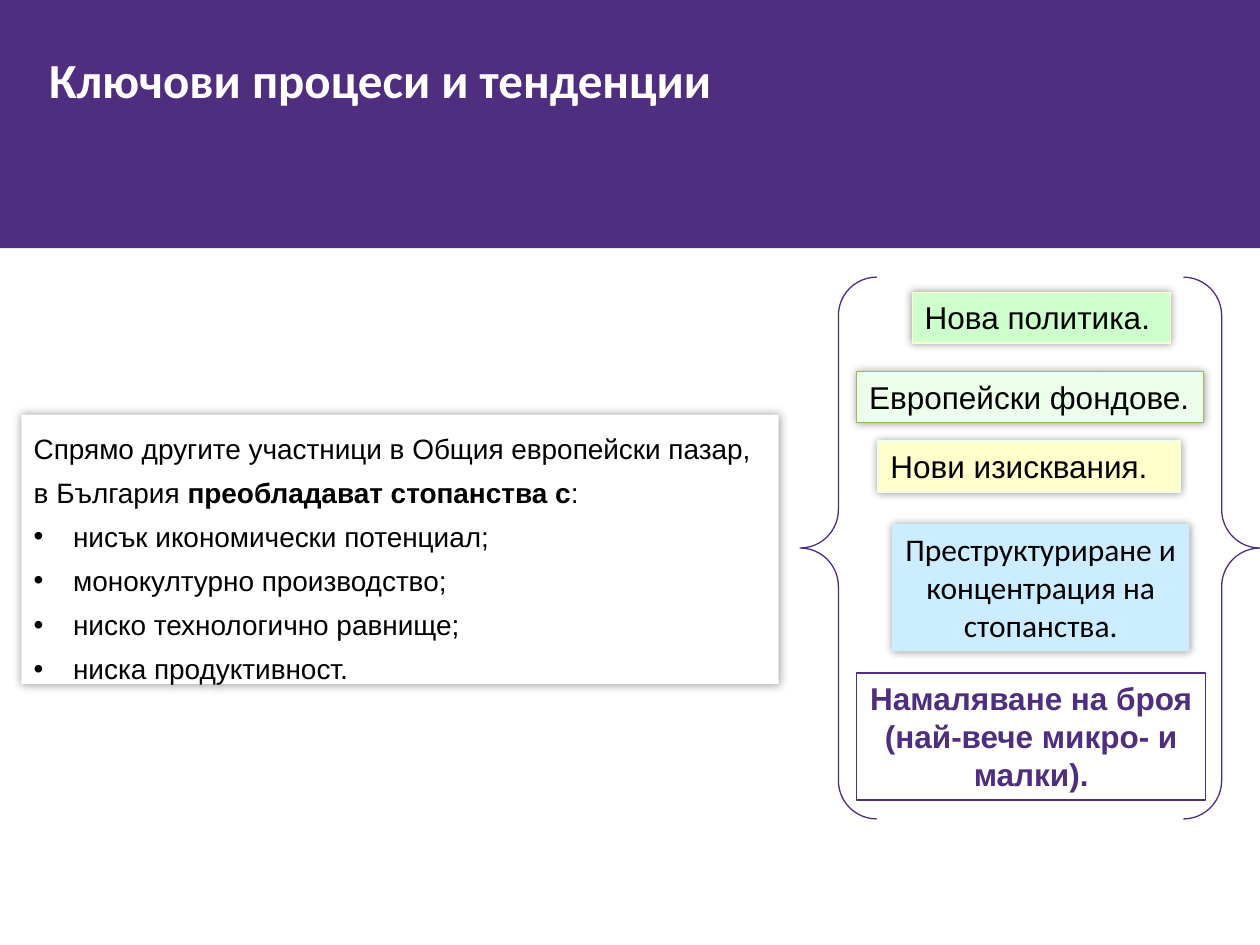
from lxml.etree import SubElement
from pptx import Presentation
from pptx.dml.color import RGBColor
from pptx.enum.shapes import MSO_SHAPE
from pptx.enum.text import MSO_ANCHOR, MSO_AUTO_SIZE, PP_ALIGN
from pptx.oxml.ns import qn
from pptx.util import Pt

COLORS = {
    "purple": "4F2D7F", "white": "FFFFFF", "black": "000000",
    "blue": "CCECFF", "yellow": "FFFFCC", "mint": "EBFFEB",
    "green": "CCFFCC", "olive": "9BBB59",
}
FACTORS = [
    ("Нова политика.", (521.3, 167, 147.6, 29.1), "green", "yellow", {}),
    ("Европейски фондове.", (489.6, 212.4, 198, 29.1), "mint", "olive", {}),
    ("Нови изисквания.", (501.8, 252, 172.8, 29.1), "yellow", "mint", {}),
    ("Преструктуриране и концентрация на стопанства.",
     (509.8, 299.5, 169.9, 72.7), "blue", None,
     {"font": "Calibri", "align": PP_ALIGN.CENTER}),
    ("Намаляване на броя (най-вече микро- и малки).",
     (489.6, 384.5, 199.4, 72.7), None, "purple",
     {"color": "purple", "bold": True, "align": PP_ALIGN.CENTER}),
]
INTRO = [
    [("Спрямо другите участници в Общия европейски пазар,", False)],
    [("в България ", False), ("преобладават стопанства с", True), (":", False)],
]
WEAKNESSES = [
    "нисък икономически потенциал;",
    "монокултурно производство;",
    "ниско технологично равнище;",
    "ниска продуктивност.",
]


def rgb(name):
    """Return the named palette colour."""
    return RGBColor.from_string(COLORS[name])


def add_text(p, text, size=18, font="Arial", color="black", bold=False,
             align=PP_ALIGN.LEFT):
    """Append a formatted run to a paragraph."""
    p.alignment = align
    r = p.add_run()
    r.text = text
    r.font.size, r.font.name, r.font.bold = Pt(size), font, bold
    r.font.color.rgb = rgb(color)


def add_shadow(sp):
    """Give a shape a soft even shadow."""
    effects = sp.element.spPr.find(qn("a:effectLst"))
    shadow = SubElement(effects, qn("a:outerShdw"), blurRad=str(Pt(5)),
                        dist="0", dir="0", algn="ctr", rotWithShape="0")
    color = SubElement(shadow, qn("a:srgbClr"), val=COLORS["black"])
    SubElement(color, qn("a:alpha"), val="40000")


def add_box(s, box, fill=None, line=None, kind=MSO_SHAPE.RECTANGLE):
    """Add a preset shape with optional fill and outline."""
    sp = s.shapes.add_shape(kind, *map(Pt, box))
    sp.shadow.inherit = False
    if fill:
        sp.fill.solid()
        sp.fill.fore_color.rgb = rgb(fill)
    else:
        sp.fill.background()
    if line:
        sp.line.color.rgb = rgb(line)
        sp.line.width = Pt(0.75)
    else:
        sp.line.fill.background()
    return sp


def prepare_frame(sp):
    """Set wrapping, top anchoring and growth, and return the text frame."""
    tf = sp.text_frame
    tf.word_wrap = True
    tf.vertical_anchor = MSO_ANCHOR.TOP
    tf.auto_size = MSO_AUTO_SIZE.SHAPE_TO_FIT_TEXT
    return tf


def add_bullet(p):
    """Give a paragraph a hanging round bullet."""
    pPr = p._p.get_or_add_pPr()
    pPr.set("marL", str(Pt(22.5)))
    pPr.set("indent", str(-Pt(22.5)))
    SubElement(pPr, qn("a:buFont"), typeface="Arial")
    SubElement(pPr, qn("a:buChar"), char="•")


def add_header(s):
    """Add the purple band and the title on it."""
    title = s.shapes.title
    band = add_box(s, (0, 0, 720, 141.8), "purple")
    title.element.addprevious(band.element)
    title.left, title.top, title.width, title.height = map(
        Pt, (28.1, 28.1, 663.1, 113))
    tf = title.text_frame
    tf.margin_left = tf.margin_top = tf.margin_right = tf.margin_bottom = 0
    tf.vertical_anchor = MSO_ANCHOR.TOP
    tf.auto_size = MSO_AUTO_SIZE.NONE
    add_text(tf.paragraphs[0], "Ключови процеси и тенденции", size=28,
             font="Calibri", color="white", bold=True)


def add_factor(s, text, box, fill, line, style):
    """Add one labelled factor, with a shadow when it is filled."""
    sp = add_box(s, box, fill, line)
    if fill:
        add_shadow(sp)
    add_text(prepare_frame(sp).paragraphs[0], text, **style)


def add_summary(s):
    """Add the panel on the prevailing farms."""
    sp = add_box(s, (12.2, 236.9, 432.7, 154.1), "white")
    add_shadow(sp)
    tf = prepare_frame(sp)
    tf.margin_top = Pt(9.6)
    lines = INTRO + [[(text, False)] for text in WEAKNESSES]
    for i, runs in enumerate(lines):
        p = tf.add_paragraph() if i else tf.paragraphs[0]
        if i:
            p.space_before = Pt(6)
        if i >= len(INTRO):
            add_bullet(p)
        for text, bold in runs:
            add_text(p, text, size=16, bold=bold)


def main():
    """Build and save the slide."""
    prs = Presentation()
    prs.slide_width, prs.slide_height = Pt(720), Pt(540)
    s = prs.slides.add_slide(prs.slide_layouts[5])
    add_header(s)
    for factor in reversed(FACTORS):
        add_factor(s, *factor)
    add_summary(s)
    add_box(s, (457.2, 158.4, 262.8, 309.6), line="purple",
            kind=MSO_SHAPE.DOUBLE_BRACE)
    prs.save("out.pptx")


if __name__ == "__main__":
    main()
